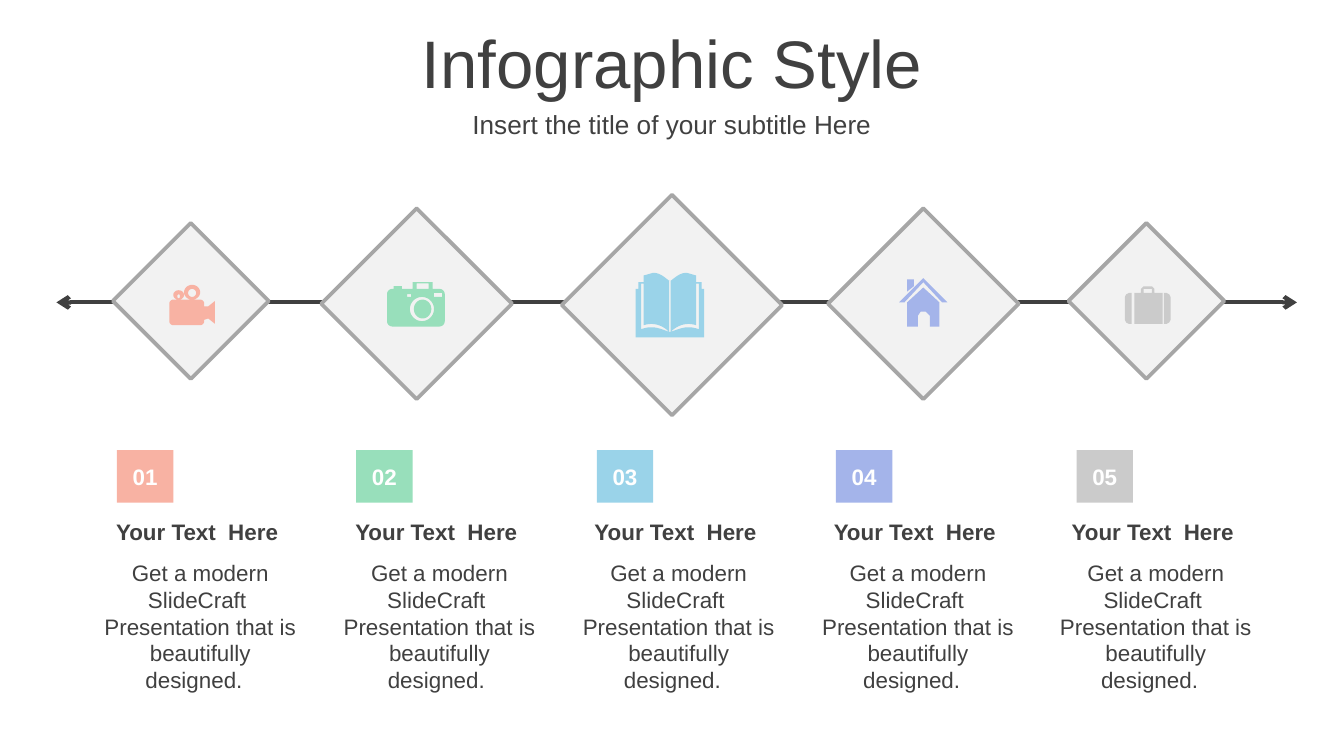
"""Build the five-step diamond timeline slide."""
from dataclasses import dataclass
from math import ceil, cos, pi, sin

from lxml.etree import SubElement
from pptx import Presentation
from pptx.dml.color import RGBColor
from pptx.enum.shapes import MSO_CONNECTOR, MSO_SHAPE
from pptx.enum.text import MSO_ANCHOR, MSO_AUTO_SIZE, PP_ALIGN
from pptx.oxml.ns import qn
from pptx.util import Pt

SCALE = 9144


@dataclass(frozen=True)
class Theme:
    font: str = "Arial"
    ink: str = "404040"
    white: str = "FFFFFF"
    panel: str = "F2F2F2"
    border: str = "A6A6A6"
    accents: tuple = ("F8B2A3", "98DFBB", "9AD3E9", "A4B4EA", "CBCBCB")
    title_size: int = 36
    subtitle_size: int = 14
    text_size: int = 12
    axis_width: float = 2.25
    border_width: float = 2


def emu(*lengths):
    return [round(length * SCALE) for length in lengths]


def rgb(color):
    return RGBColor.from_string(color)


def write_text(shape, text, *, font, size, color, bold=False, anchor=MSO_ANCHOR.MIDDLE,
               fit=MSO_AUTO_SIZE.NONE):
    frame = shape.text_frame
    frame.word_wrap = True
    frame.auto_size = fit
    frame.vertical_anchor = anchor
    paragraph = frame.paragraphs[0]
    paragraph.alignment = PP_ALIGN.CENTER
    run = paragraph.add_run()
    run.text = text
    run.font.name = font
    run.font.size = Pt(size)
    run.font.bold = bold
    run.font.color.rgb = rgb(color)


def box(left, top, right, bottom):
    return [(left, top), (right, top), (right, bottom), (left, bottom)]


def ellipse(left, top, right, bottom, steps=32):
    angles = [2 * pi * step / steps for step in range(steps)]
    return [((left + right + (right - left) * cos(angle)) / 2,
             (top + bottom + (bottom - top) * sin(angle)) / 2) for angle in angles]


def curve(start, first, second, end, steps=10):
    points = []
    for step in range(steps + 1):
        t = step / steps
        weights = ((1 - t) ** 3, 3 * t * (1 - t) ** 2, 3 * t * t * (1 - t), t ** 3)
        points.append(tuple(sum(weight * point[axis] for weight, point
                                in zip(weights, (start, first, second, end)))
                            for axis in (0, 1)))
    return points


def rounded_box(left, top, right, bottom, radius):
    points = []
    for x, y, turn in ((right, bottom, 0), (left, bottom, 1), (left, top, 2), (right, top, 3)):
        center_x = x - radius if x == right else x + radius
        center_y = y - radius if y == bottom else y + radius
        for step in range(7):
            angle = (turn + step / 6) * pi / 2
            points.append((center_x + radius * cos(angle), center_y + radius * sin(angle)))
    return points


def mirror(points, axis):
    return [(2 * axis - x, y) for x, y in reversed(points)]


def video_icon():
    lens = [(152, 228), (155, 228), (160, 224), (160, 241), (155, 237), (152, 238)]
    return [rounded_box(126, 223, 152, 242, 3), lens,
            ellipse(129, 216, 137, 223), ellipse(132, 219, 134, 222),
            ellipse(137, 212, 149, 223), ellipse(140, 215, 146, 221)]


def camera_icon():
    finder = [(307, 215), (307, 210), (322, 210), (322, 215),
              (319, 215), (319, 211), (310, 211), (310, 215)]
    return [rounded_box(288, 215, 331, 243, 4), finder, box(293, 213, 299, 215),
            box(303, 219, 306, 221), box(323, 218, 329, 221),
            ellipse(305, 221, 323, 239), ellipse(308, 223, 321, 237)]


def book_icon():
    middle = 498.5
    cover = (curve((498, 209), (494, 206), (491, 203), (486, 203))
             + [(479, 205), (479, 210), (475, 210), (475, 215), (473, 215), (473, 251)])
    page_edge = (curve((498, 247), (492, 241), (485, 240), (479, 242))
                 + [(479, 211), (477, 211)]
                 + curve((477, 245), (485, 242), (490, 244), (498, 247)))
    return [cover + mirror(cover, middle), page_edge, mirror(page_edge, middle),
            box(498, 209, 499, 247)]


def house_icon():
    walls = [(687, 214), (699, 225), (699, 243), (692, 243), (692, 235), (689, 232),
             (685, 232), (683, 235), (683, 243), (675, 243), (675, 225)]
    chimney = [(675, 208), (680, 208), (680, 213), (675, 217)]
    roof = [(687, 207), (705, 225), (701, 225), (687, 210), (673, 225), (669, 225)]
    return [walls, chimney, roof]


def suitcase_icon():
    side = [(842, 218), (842, 241), (840, 241), (838, 240), (837, 238),
            (837, 221), (838, 219), (840, 218)]
    handle = [(849, 218), (849, 215), (851, 213), (857, 213), (859, 215), (859, 218),
              (857, 218), (857, 215), (851, 215), (851, 218)]
    return [side, mirror(side, 854), box(844, 218, 865, 241), handle]


class SlideBuilder:
    """Hold the theme and the current slide, and draw each kind of element."""

    def __init__(self, presentation, theme):
        self.theme = theme
        self.slide = presentation.slides.add_slide(presentation.slide_layouts[0])

    def text(self, shape, text, **options):
        style = {"font": self.theme.font, "size": self.theme.text_size, "color": self.theme.ink}
        write_text(shape, text, **(style | options))

    def placeholder(self, index, text, size, *bounds):
        shape = self.slide.placeholders[index]
        shape.left, shape.top, shape.width, shape.height = emu(*bounds)
        self.text(shape, text, size=size)

    def label(self, text, *bounds, bold=False):
        shape = self.slide.shapes.add_textbox(*emu(*bounds))
        self.text(shape, text, bold=bold, anchor=MSO_ANCHOR.TOP,
                  fit=MSO_AUTO_SIZE.SHAPE_TO_FIT_TEXT)

    def paint(self, shape, fill, line=None):
        shape.shadow.inherit = False
        shape.fill.solid()
        shape.fill.fore_color.rgb = rgb(fill)
        if line:
            shape.line.color.rgb = rgb(line)
            shape.line.width = Pt(self.theme.border_width)
        else:
            shape.line.fill.background()

    def axis(self, start, end, y):
        line = self.slide.shapes.add_connector(MSO_CONNECTOR.STRAIGHT, *emu(start, y, end, y))
        line.line.color.rgb = rgb(self.theme.ink)
        line.line.width = Pt(self.theme.axis_width)
        properties = line._element.spPr.find(qn("a:ln"))
        for end_name in ("a:headEnd", "a:tailEnd"):
            SubElement(properties, qn(end_name), type="arrow")
        SubElement(line._element.spPr, qn("a:effectLst"))

    def diamond(self, left, top, size):
        shape = self.slide.shapes.add_shape(MSO_SHAPE.DIAMOND, *emu(left, top, size, size))
        self.paint(shape, self.theme.panel, self.theme.border)

    def badge(self, text, fill, *bounds):
        shape = self.slide.shapes.add_shape(MSO_SHAPE.RECTANGLE, *emu(*bounds))
        self.paint(shape, fill)
        self.text(shape, text, color=self.theme.white, bold=True)

    def icon(self, contours, fill):
        outlines = [[emu(*point) for point in contour] for contour in contours]
        builder = self.slide.shapes.build_freeform(*outlines[0][0])
        for outline in outlines:
            builder.move_to(*outline[0])
            builder.add_line_segments(outline[1:], close=True)
        self.paint(builder.convert_to_shape(), fill)


def main():
    theme = Theme()
    presentation = Presentation()
    presentation.slide_width = 1000 * SCALE
    presentation.slide_height = presentation.slide_width * 9 // 16
    builder = SlideBuilder(presentation, theme)
    builder.placeholder(0, "Infographic Style", theme.title_size, 0, 14, 1000, 63)
    builder.placeholder(1, "Insert the title of your subtitle Here", theme.subtitle_size,
                        0, 77, 1000, 31)
    builder.axis(42, 965, 225)
    diamonds = ((84, 166, 116), (239, 155, 142), (418, 145, 164), (616, 155, 142), (795, 166, 116))
    icons = (video_icon(), camera_icon(), book_icon(), house_icon(), suitcase_icon())
    for diamond in diamonds:
        builder.diamond(*diamond)
    for index, (icon, accent) in enumerate(zip(icons, theme.accents)):
        left = 65 + ceil(177.75 * index)
        ending = " " if index == 1 else "  "
        builder.label("Your Text  Here ", left, 381, 168, 30, bold=True)
        builder.label("Get a modern SlideCraft  Presentation that is beautifully designed."
                      + ending, left, 411, 168, 91)
        builder.badge(f"{index + 1:02}", accent, 87 + 714 * index // 4, 335, 42, 39)
        builder.icon(icon, accent)
    presentation.save("out.pptx")


if __name__ == "__main__":
    main()
